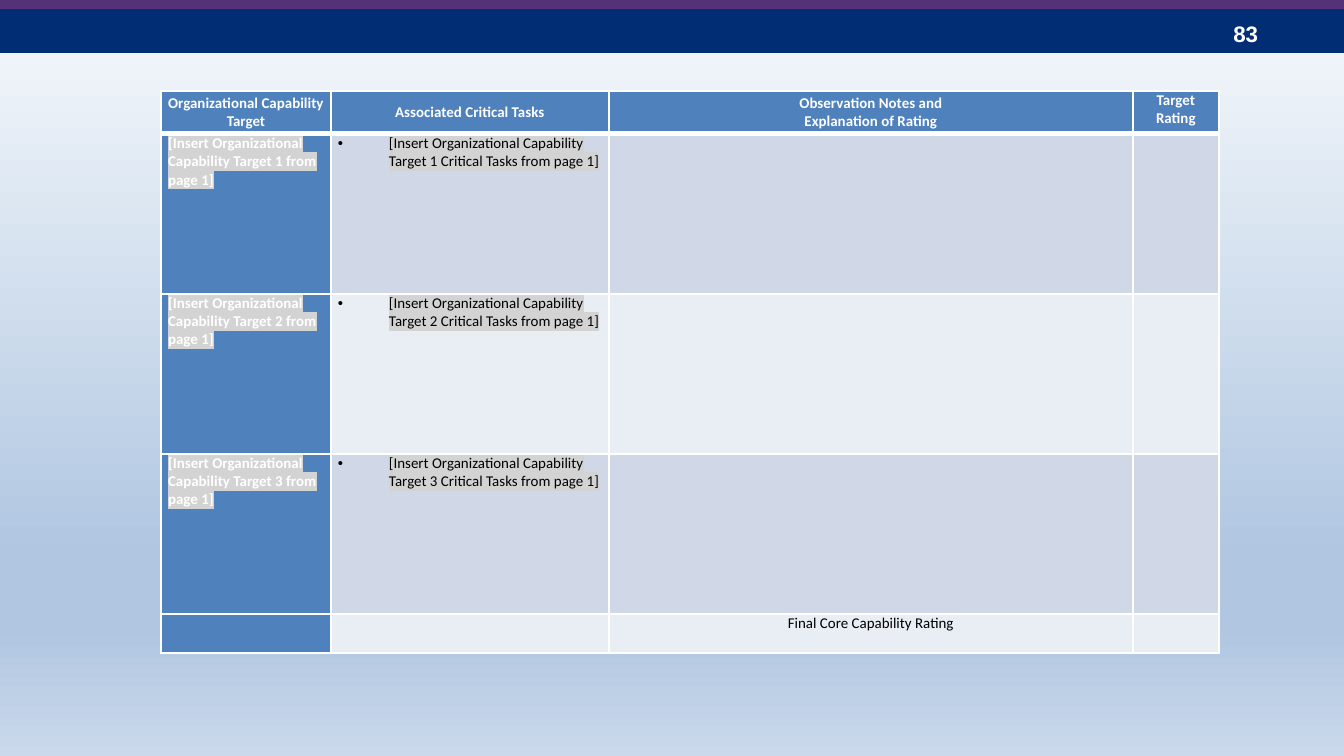
import pptx
import pptx.dml.color
import pptx.enum.shapes
import pptx.enum.text
import pptx.oxml
import pptx.oxml.ns
import pptx.util
from lxml import etree

RGB = pptx.dml.color.RGBColor
ALIGN = pptx.enum.text.PP_ALIGN
ANCHOR = pptx.enum.text.MSO_ANCHOR
qn = pptx.oxml.ns.qn

WHITE = RGB(0xFF, 0xFF, 0xFF)
BLACK = RGB(0, 0, 0)
NAVY = RGB(0x00, 0x2D, 0x73)
PURPLE = RGB(0x55, 0x32, 0x78)
BLUE = RGB(0x4F, 0x81, 0xBD)
BAND_DARK = RGB(0xD0, 0xD8, 0xE8)
BAND_LIGHT = RGB(0xE9, 0xED, 0xF4)
GREY = RGB(0xD3, 0xD3, 0xD3)
SKY = [(0, RGB(0xF6, 0xF9, 0xFC)), (74, RGB(0xB0, 0xC6, 0xE1)),
       (83, RGB(0xB0, 0xC6, 0xE1)), (100, RGB(0xCA, 0xD9, 0xEB))]

COLUMNS = [170, 278, 524, 86]
ROWS = [43, 160, 160, 160, 39]
HEADERS = [["Organizational Capability Target"], ["Associated Critical Tasks"],
           ["Observation Notes and", "Explanation of Rating"], ["Target Rating"]]
BOLD = {"size": pptx.util.Pt(8), "name": "Calibri", "bold": True}
PLAIN = {**BOLD, "bold": False}


def px(n):
    """Turn slide pixels into EMU."""
    return pptx.util.Emu(round(n * 914400 / 134.4))


def set_all(obj, values):
    """Set each named attribute of an object."""
    for name, value in values.items():
        setattr(obj, name, value)


def add_color(parent, tag, color):
    """Append an element that holds one RGB colour."""
    el = etree.SubElement(parent, qn(tag))
    etree.SubElement(el, qn("a:srgbClr"), val=str(color))
    return el


def paint_background(s):
    """Fill the background with the vertical sky gradient."""
    fill = s.background.fill
    fill.gradient()
    fill.gradient_angle = 270
    stops = next(s.element.iter(qn("a:gsLst")))
    for stop in list(stops):
        stops.remove(stop)
    for percent, color in SKY:
        add_color(stops, "a:gs", color).set("pos", str(percent * 1000))


def add_bar(s, top, height, color):
    """Add a full-width bar."""
    sp = s.shapes.add_shape(pptx.enum.shapes.MSO_SHAPE.RECTANGLE,
                            0, px(top), px(1344), px(height))
    sp.shadow.inherit = False
    sp.fill.solid()
    sp.fill.fore_color.rgb = color
    sp.line.fill.background()


def add_run(p, text, fmt, color, highlight=None):
    """Add a formatted run, with an optional highlight."""
    r = p.add_run()
    r.text = text
    set_all(r.font, fmt)
    r.font.color.rgb = color
    if highlight is not None:
        rPr = r.font._element
        rPr.find(qn("a:solidFill")).addnext(add_color(rPr, "a:highlight", highlight))


def add_page_number(s, text):
    """Add the page number at the top right."""
    tf = s.shapes.add_textbox(px(1220), px(13), px(101), px(41)).text_frame
    set_all(tf, {"word_wrap": True, "vertical_anchor": ANCHOR.MIDDLE})
    add_run(tf.paragraphs[0], text,
            {"size": pptx.util.Pt(12), "name": "Arial", "bold": True}, WHITE)


def add_bullet(p):
    """Give a paragraph a hanging bullet."""
    pPr = p._p.get_or_add_pPr()
    pPr.set("marL", str(px(51)))
    pPr.set("indent", str(-px(51)))
    etree.SubElement(pPr, qn("a:buFont"), typeface="Arial")
    etree.SubElement(pPr, qn("a:buChar"), char="•")


def style_cell(cell, row, color):
    """Set the margins, white borders and fill of a cell."""
    set_all(cell, {"margin_left": px(7), "margin_right": px(7),
                   "margin_top": 0, "margin_bottom": 0})
    tcPr = cell._tc.get_or_add_tcPr()
    thick = {0: "a:lnB", 1: "a:lnT"}.get(row)
    for tag in ("a:lnL", "a:lnR", "a:lnT", "a:lnB"):
        width = pptx.util.Pt(3 if tag == thick else 1)
        ln = etree.SubElement(tcPr, qn(tag), w=str(width))
        add_color(ln, "a:solidFill", WHITE)
    cell.fill.solid()
    cell.fill.fore_color.rgb = color
    etree.SubElement(cell.text_frame.paragraphs[0]._p, qn("a:endParaRPr"), sz="800")


def write_cell(cell, lines, fmt, color, align=None, highlight=None):
    """Write one paragraph per line and return the first."""
    tf = cell.text_frame
    for i, line in enumerate(lines):
        p = tf.add_paragraph() if i else tf.paragraphs[0]
        p.alignment = align
        add_run(p, line, fmt, color, highlight)
    return tf.paragraphs[0]


def add_rating_table(s):
    """Add the capability target rating table."""
    table = s.shapes.add_table(len(ROWS), len(COLUMNS), px(161), px(91),
                               px(sum(COLUMNS)), px(sum(ROWS))).table
    set_all(table, {"first_row": False, "horz_banding": False})
    for column, width in zip(table.columns, COLUMNS):
        column.width = px(width)
    for i, height in enumerate(ROWS):
        table.rows[i].height = px(height)
        band = BAND_DARK if i % 2 else BAND_LIGHT
        for j in range(len(COLUMNS)):
            style_cell(table.cell(i, j), i, BLUE if i == 0 or j == 0 else band)
    for j, lines in enumerate(HEADERS):
        cell = table.cell(0, j)
        cell.vertical_anchor = ANCHOR.TOP if j == 3 else ANCHOR.MIDDLE
        write_cell(cell, lines, BOLD, WHITE, ALIGN.CENTER)
    for n in (1, 2, 3):
        target = f"Insert Organizational Capability Target {n}"
        write_cell(table.cell(n, 0), [f"[{target} from page 1]"], BOLD, WHITE,
                   highlight=GREY)
        add_bullet(write_cell(table.cell(n, 1),
                              [f"[{target} Critical Tasks from page 1]"],
                              PLAIN, BLACK, highlight=GREY))
    write_cell(table.cell(4, 2), ["Final Core Capability Rating"], PLAIN, BLACK,
               ALIGN.CENTER)


def main():
    """Build and save the slide."""
    prs = pptx.Presentation()
    set_all(prs, {"slide_width": px(1344), "slide_height": px(756)})
    s = prs.slides.add_slide(prs.slide_layouts[6])
    paint_background(s)
    add_bar(s, 9, 44, NAVY)
    add_page_number(s, "83")
    add_bar(s, 0, 9, PURPLE)
    add_rating_table(s)
    prs.save("out.pptx")


if __name__ == "__main__":
    main()
